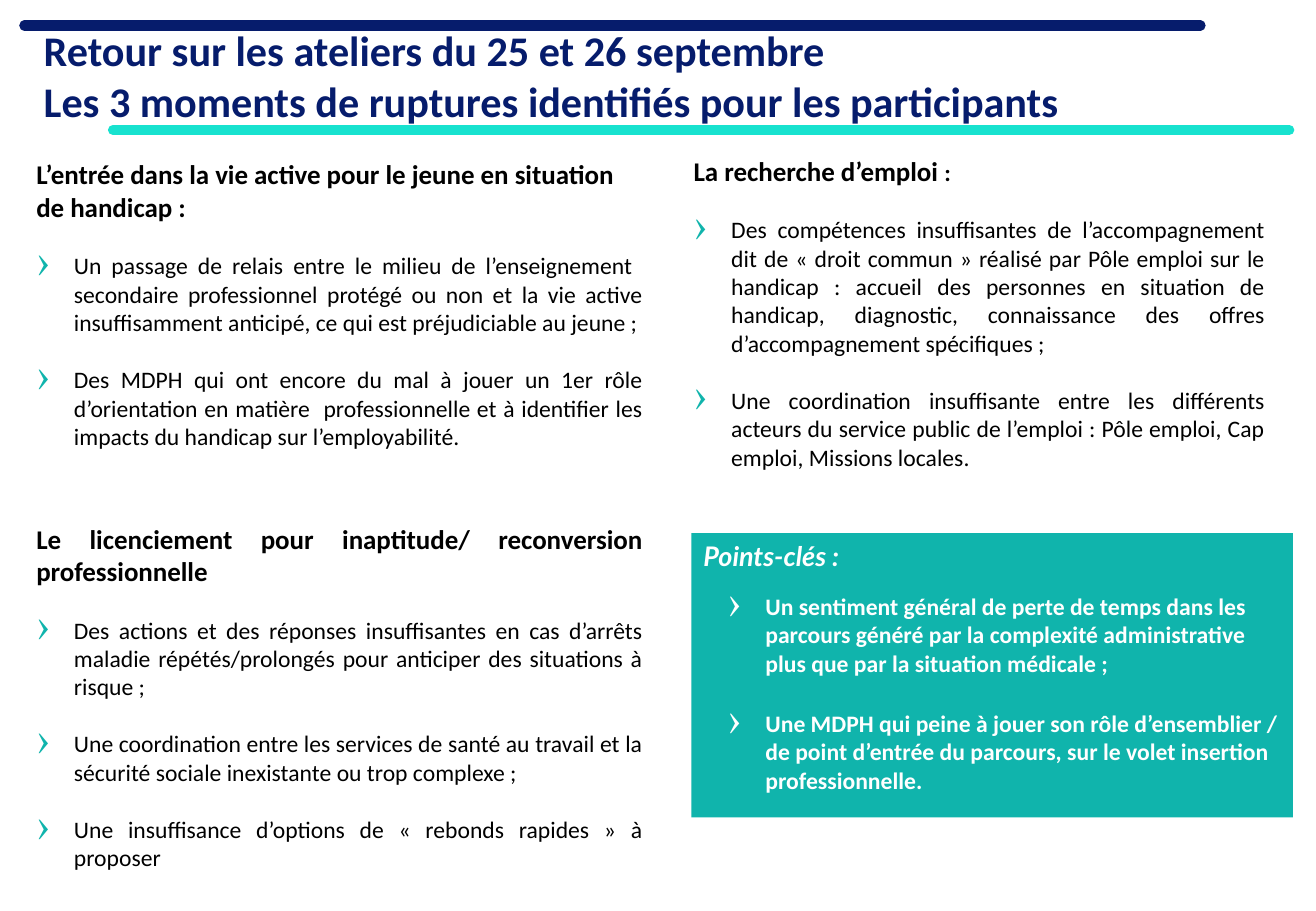
from lxml.etree import SubElement
from pptx import Presentation
from pptx.dml.color import RGBColor
from pptx.enum.shapes import MSO_CONNECTOR, MSO_SHAPE
from pptx.enum.text import MSO_ANCHOR, MSO_AUTO_SIZE, PP_ALIGN
from pptx.oxml.ns import qn
from pptx.util import Inches, Pt

NAVY = RGBColor(0x06, 0x1C, 0x6C)
TURQUOISE = RGBColor(0x18, 0xE2, 0xCF)
TEAL = RGBColor(0x10, 0xB4, 0xAC)
BLACK = RGBColor(0, 0, 0)
WHITE = RGBColor(0xFF, 0xFF, 0xFF)


def add_text(paragraph, text, font="Calibri", size=14, color=BLACK, bold=False, italic=False):
    run = paragraph.add_run()
    run.text = text
    run.font.name = font
    run.font.size = Pt(size)
    run.font.color.rgb = color
    run.font.bold = bold
    run.font.italic = italic


def add_bullet(paragraph, color, left):
    """Give the paragraph a large chevron and a hanging indent."""
    properties = paragraph._p.get_or_add_pPr()
    properties.set("marL", str(Inches(left)))
    properties.set("indent", str(-Inches(0.31)))
    bullet_color = SubElement(properties, qn("a:buClr"))
    SubElement(bullet_color, qn("a:srgbClr"), val=str(color))
    SubElement(properties, qn("a:buSzPct"), val="180000")
    SubElement(properties, qn("a:buChar"), char="›")


class WorkshopSlide:
    def __init__(self, presentation):
        self.slide = presentation.slides.add_slide(presentation.slide_layouts[6])

    def rule(self, left, top, color, length=9.68):
        connector = self.slide.shapes.add_connector(
            MSO_CONNECTOR.STRAIGHT, Inches(left), Inches(top), Inches(left + length), Inches(top))
        connector.line.color.rgb = color
        connector.line.width = Pt(6)
        properties = connector._element.spPr
        properties.find(qn("a:ln")).set("cap", "rnd")
        SubElement(properties, qn("a:effectLst"))

    def text_box(self, left, top, width, height):
        box = self.slide.shapes.add_textbox(Inches(left), Inches(top), Inches(width), Inches(height))
        frame = box.text_frame
        frame.word_wrap = True
        frame.auto_size = MSO_AUTO_SIZE.SHAPE_TO_FIT_TEXT
        return frame

    def title(self, lines):
        frame = self.text_box(0.29, 0.16, 10.34, 0.92)
        frame.margin_left = frame.margin_right = Inches(0.07)
        frame.margin_top = frame.margin_bottom = Inches(0.04)
        for index, line in enumerate(lines):
            paragraph = frame.add_paragraph() if index else frame.paragraphs[0]
            add_text(paragraph, line, size=25, color=NAVY, bold=True)

    def bullets(self, frame, items, gaps, align, left=0.31, bullet_color=TEAL, **text_format):
        for item, gap in zip(items, gaps):
            paragraph = frame.add_paragraph()
            paragraph.alignment = align
            paragraph.space_before = Pt(gap)
            add_bullet(paragraph, bullet_color, left)
            add_text(paragraph, item, **text_format)

    def rupture(self, place, heading, items, align=PP_ALIGN.JUSTIFY, ending=""):
        """Add one turning point: a bold heading and its bullets."""
        frame = self.text_box(*place)
        paragraph = frame.paragraphs[0]
        paragraph.alignment = align
        add_text(paragraph, heading, size=16, bold=True)
        if ending:
            add_text(paragraph, ending, bold=True)
        self.bullets(frame, items, [17] * len(items), PP_ALIGN.JUSTIFY)

    def key_points(self, place, heading, items):
        panel = self.slide.shapes.add_shape(MSO_SHAPE.RECTANGLE, *map(Inches, place))
        panel.shadow.inherit = False
        panel.fill.solid()
        panel.fill.fore_color.rgb = TEAL
        panel.line.fill.background()
        frame = panel.text_frame
        frame.word_wrap = True
        frame.vertical_anchor = MSO_ANCHOR.TOP
        paragraph = frame.paragraphs[0]
        paragraph.alignment = PP_ALIGN.LEFT
        add_text(paragraph, heading, font="Lato", size=16, color=WHITE, bold=True, italic=True)
        self.bullets(frame, items, [12, 19], PP_ALIGN.LEFT, left=0.51,
                     bullet_color=WHITE, color=WHITE, bold=True)


def main():
    presentation = Presentation()
    presentation.slide_width = Inches(10.83)
    presentation.slide_height = Inches(7.5)
    page = WorkshopSlide(presentation)

    page.rule(0.2, 0.21, NAVY)
    page.rule(0.93, 1.07, TURQUOISE)
    page.title(["Retour sur les ateliers du 25 et 26 septembre",
                "Les 3 moments de ruptures identifiés pour les participants"])

    page.rupture((0.2, 1.25, 5.19, 2.52),
                 "L’entrée dans la vie active pour le jeune en situation de handicap :", [
        "Un passage de relais entre le milieu de l’enseignement  secondaire professionnel protégé "
        "ou non et la vie active insuffisamment anticipé, ce qui est préjudiciable au jeune ;",
        "Des MDPH qui ont encore du mal à jouer un 1er rôle d’orientation en matière  "
        "professionnelle et à identifier les impacts du handicap sur l’employabilité.",
    ], align=PP_ALIGN.LEFT)

    page.rupture((5.61, 1.22, 4.9, 2.96), "La recherche d’emploi ", [
        "Des compétences insuffisantes de l’accompagnement dit de « droit commun » réalisé par "
        "Pôle emploi sur le handicap : accueil des personnes en situation de handicap, "
        "diagnostic, connaissance des offres d’accompagnement spécifiques ;",
        "Une coordination insuffisante entre les différents acteurs du service public de "
        "l’emploi : Pôle emploi, Cap emploi, Missions locales.",
    ], ending=":")

    page.key_points((5.69, 4.39, 4.95, 2.34), "Points-clés :", [
        "Un sentiment général de perte de temps dans les parcours généré par la complexité "
        "administrative plus que par la situation médicale ;",
        "Une MDPH qui peine à jouer son rôle d’ensemblier / de point d’entrée du parcours, "
        "sur le volet insertion professionnelle.",
    ])

    page.rupture((0.2, 4.25, 5.19, 3),
                 "Le licenciement pour inaptitude/ reconversion professionnelle", [
        "Des actions et des réponses insuffisantes en cas d’arrêts maladie répétés/prolongés "
        "pour anticiper des situations à risque ;",
        "Une coordination entre les services de santé au travail et la sécurité sociale "
        "inexistante ou trop complexe ;",
        "Une insuffisance d’options de « rebonds rapides » à proposer",
    ])

    presentation.save("out.pptx")


if __name__ == "__main__":
    main()
